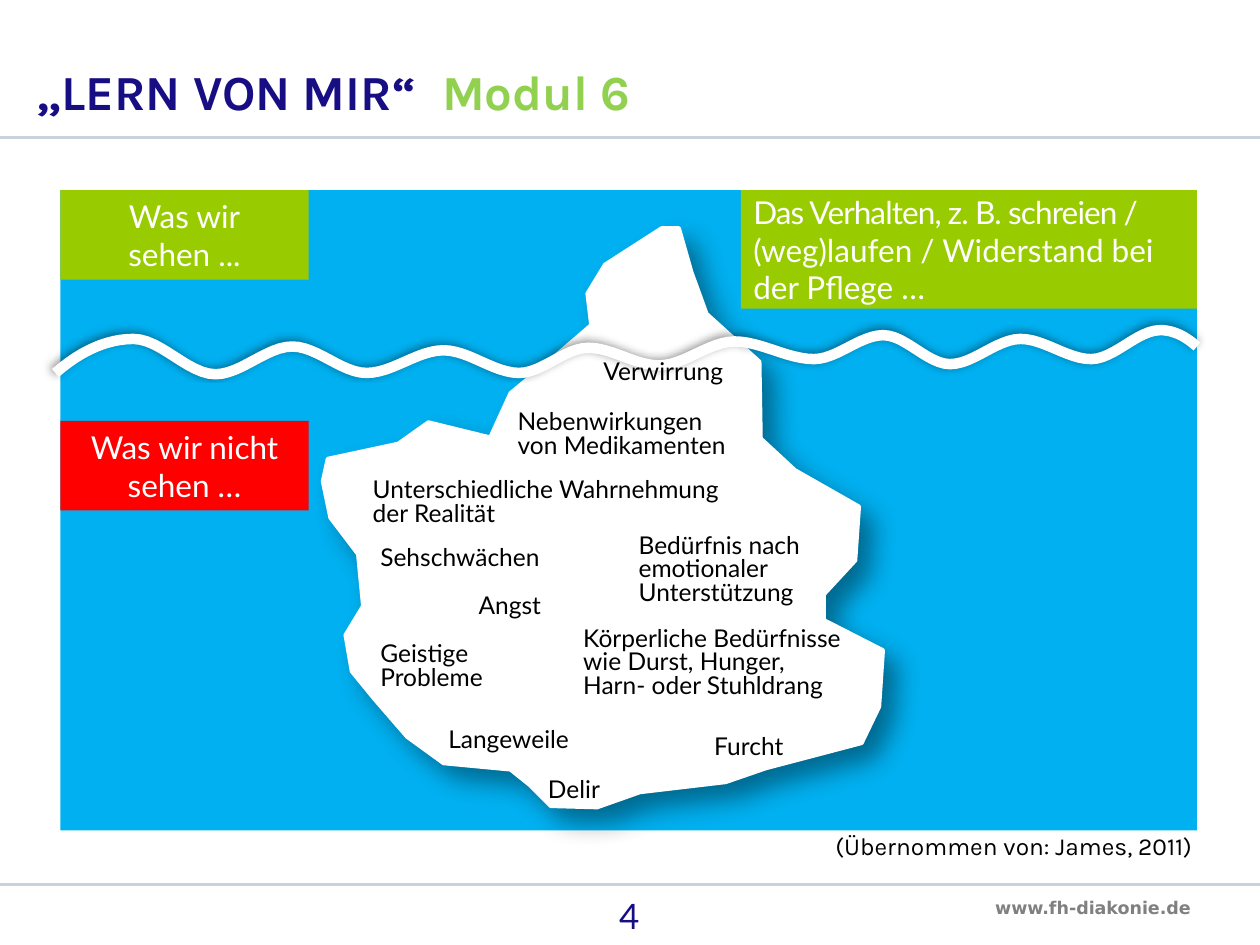
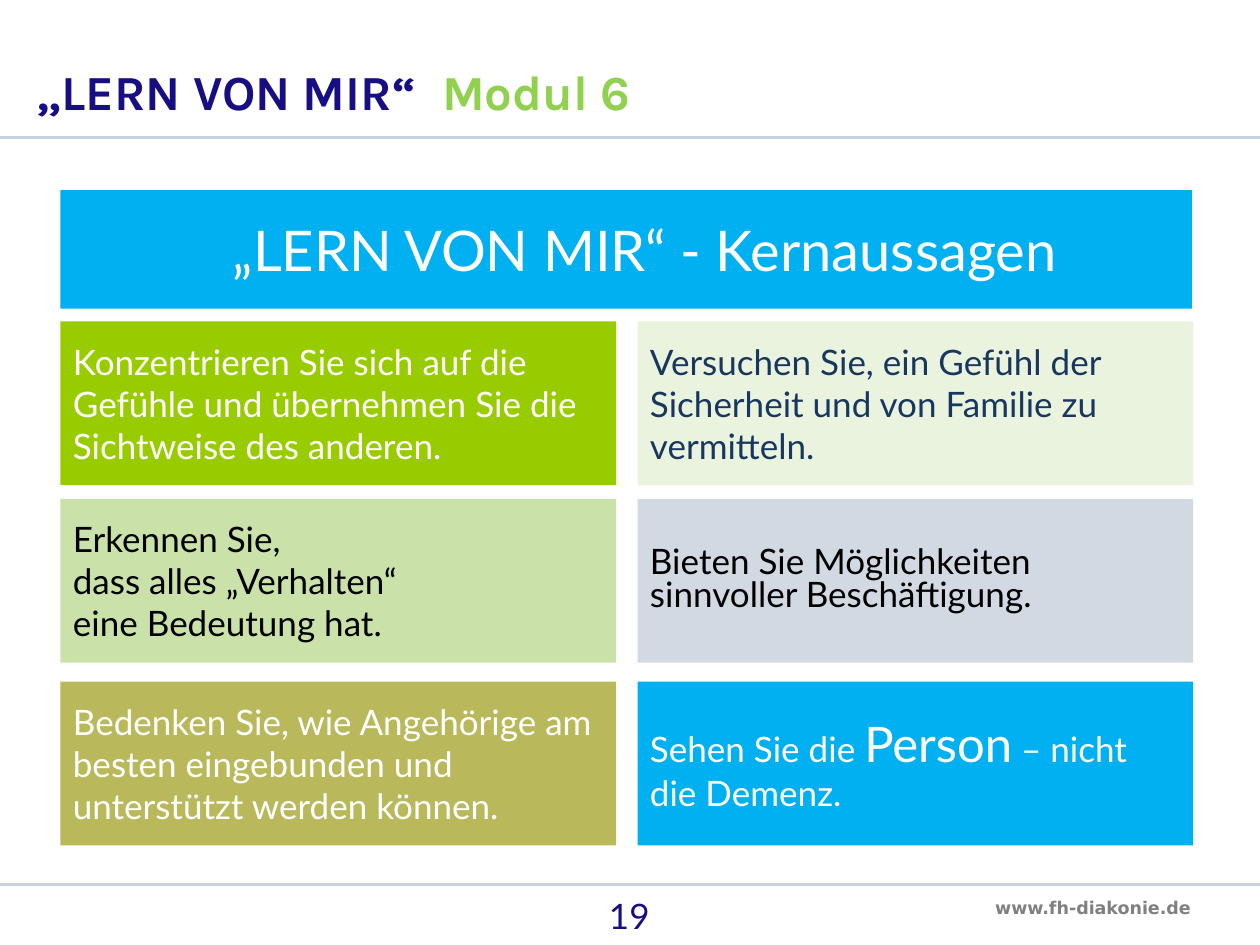
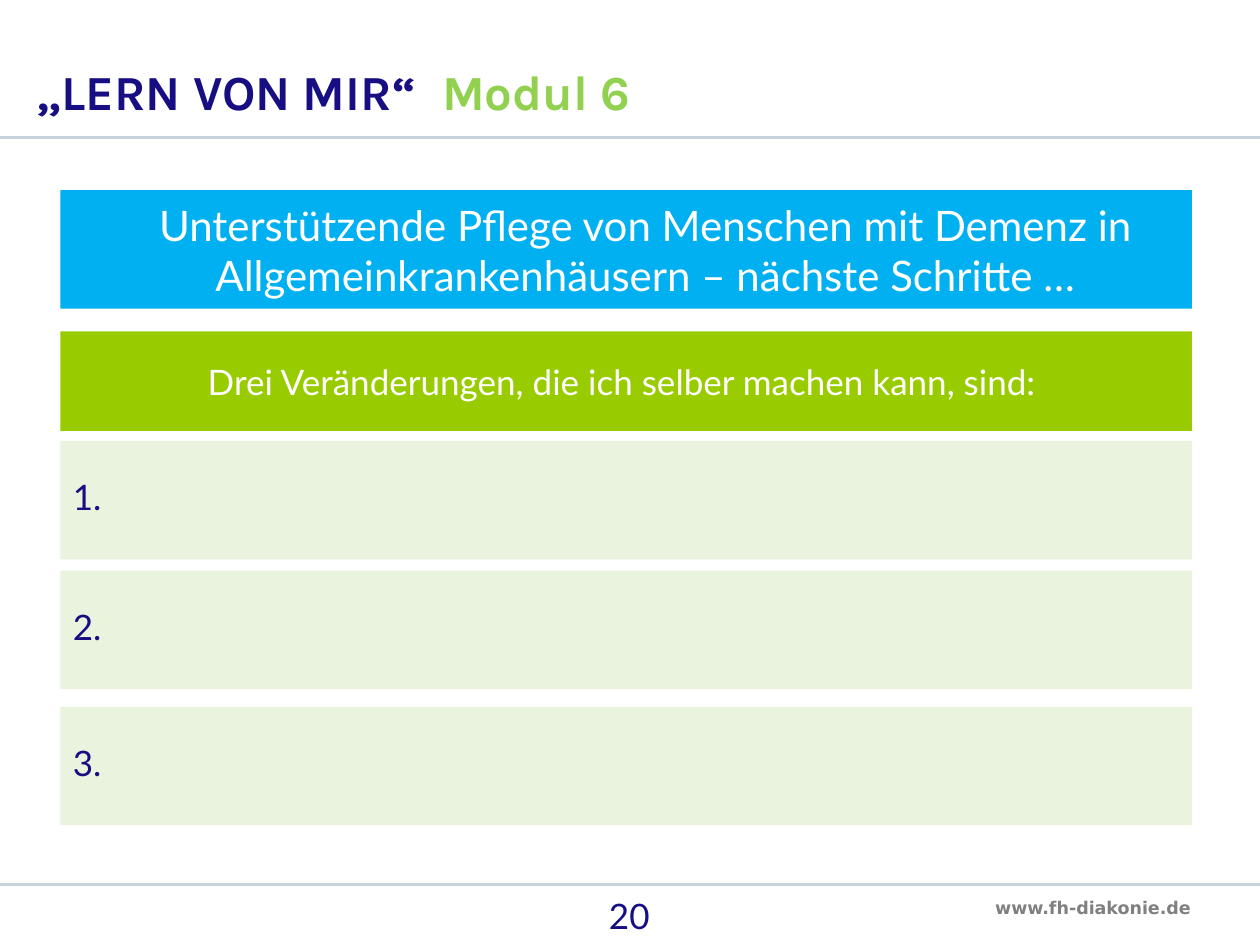
"""Build three training slides of "LERN VON MIR", module 6."""
from copy import deepcopy

from lxml import etree
from pptx import Presentation
from pptx.dml.color import RGBColor
from pptx.enum.shapes import MSO_CONNECTOR, MSO_SHAPE
from pptx.enum.text import MSO_ANCHOR, PP_ALIGN
from pptx.oxml.ns import qn
from pptx.util import Inches, Pt

LEFT, CENTER, RIGHT = PP_ALIGN.LEFT, PP_ALIGN.CENTER, PP_ALIGN.RIGHT
TOP, MIDDLE, BOTTOM = MSO_ANCHOR.TOP, MSO_ANCHOR.MIDDLE, MSO_ANCHOR.BOTTOM
RECTANGLE, STRAIGHT = MSO_SHAPE.RECTANGLE, MSO_CONNECTOR.STRAIGHT

WHITE, BLACK, GRAY = "FFFFFF", "000000", "808080"
NAVY, DARK_BLUE, BLUE, RED = "170E83", "17375E", "00B0F0", "FF0000"
LEAF, GREEN, PALE_GREEN, MIST = "92D050", "99CC00", "EAF3DD", "D2D9E2"
SOFT_GREEN, OLIVE, RULE = "CAE2AA", "B9B95C", "C8D2DC"
BODY, DISPLAY, WEB = "Lato", "Karla", "DejaVu Sans"

MARGIN, CONTENT_TOP, CONTENT_WIDTH, BANNER_HEIGHT = 0.48, 1.51, 8.98, 0.94
RULE_TOPS = (1.09, 7.02)
TITLE = [("„LERN VON MIR“", 28, NAVY), ("\t", 28, NAVY), ("Modul 6", 28, LEAF)]
MODULE_TAB = 3.22
WEBSITE = "www.fh-diakonie.de"

ICEBERG = [
    (3.23, 5.85), (2.97, 5.55), (2.79, 5.33), (2.74, 5.04), (2.88, 4.81),
    (2.84, 4.4), (2.62, 4.11), (2.56, 3.82), (2.6, 3.64), (3.16, 3.52),
    (3.4, 3.35), (3.89, 3.47), (4.05, 3.12), (4.4, 2.83), (4.69, 2.58),
    (4.66, 2.33), (4.8, 2.1), (5.25, 1.81), (5.39, 1.81), (5.49, 2.16),
    (5.61, 2.49), (6.03, 2.87), (6.04, 3.48), (6.31, 3.73), (6.82, 4.02),
    (6.79, 4.45), (6.54, 4.72), (6.54, 4.92), (7.01, 5.16), (6.98, 5.61),
    (6.84, 5.9), (6.08, 6.1), (5.76, 6.21), (5.08, 6.29), (4.74, 6.41),
    (4.37, 6.4), (4.2, 6.23), (4.05, 6.11), (3.52, 6.06),
]
WAVE_LEFT, WAVE_RIGHT = 0.44, 9.5
WAVE_TURNS = [
    (1.06, 2.69), (1.71, 2.97), (2.32, 2.75), (2.91, 2.96), (3.52, 2.78),
    (4.12, 2.96), (4.67, 2.76), (5.23, 2.9), (5.83, 2.71), (6.46, 2.85),
    (7.01, 2.66), (7.54, 2.89), (8.1, 2.69), (8.66, 2.85), (9.21, 2.62),
]
WAVE_PATH = [(WAVE_LEFT, 2.96), *WAVE_TURNS, (WAVE_RIGHT, 2.75)]
WAVE_STEPS = 12

SEEN = "Was wir\nsehen ..."
UNSEEN = "Was wir nicht sehen …"
BEHAVIOUR = [
    ("Das Verhalten, z. B. schreien / ", 18, WHITE),
    ("(weg)laufen / Widerstand bei der Pflege …", 18, WHITE),
]
SOURCE = "(Übernommen von: James, 2011) "
LINE_HEIGHT, BOX_PADDING = 0.19, 0.1
CAUSES = [
    ("Delir", 4.25, 6.14, 1.62, 1),
    ("Angst", 3.7, 4.68, 0.9, 1),
    ("Sehschwächen", 2.92, 4.3, 1.56, 1),
    ("Geistige Probleme", 2.92, 5.06, 1.08, 2),
    ("Nebenwirkungen\nvon Medikamenten", 4.01, 3.22, 2.64, 2),
    ("Bedürfnis nach emotionaler Unterstützung", 4.97, 4.2, 2.04, 3),
    ("Langeweile", 3.46, 5.74, 2.04, 1),
    ("Unterschiedliche Wahrnehmung der Realität", 2.86, 3.76, 3, 2),
    ("Furcht", 5.57, 5.8, 0.78, 1),
    ("Verwirrung", 4.69, 2.82, 1.29, 1),
    ("Körperliche Bedürfnisse wie Durst, Hunger, Harn- oder Stuhldrang",
     4.53, 4.94, 2.28, 4),
]

KEY_HEADING = "„LERN VON MIR“ - Kernaussagen"
KEY_COLUMNS, KEY_ROWS = (MARGIN, 5.06), (2.55, 3.96, 5.41)
KEY_MESSAGES = [
    [("Konzentrieren Sie sich auf die Gefühle und übernehmen Sie die "
      "Sichtweise des anderen.", GREEN, WHITE, 1),
     ("Versuchen Sie, ein Gefühl der Sicherheit und von Familie zu "
      "vermitteln.", PALE_GREEN, DARK_BLUE, 1)],
    [("Erkennen Sie,\ndass alles „Verhalten“\neine Bedeutung hat.",
      SOFT_GREEN, BLACK, 1),
     ("Bieten Sie Möglichkeiten sinnvoller Beschäftigung.",
      MIST, BLACK, 0.8)],
    [("Bedenken Sie, wie Angehörige am besten eingebunden und unterstützt "
      "werden können.", OLIVE, WHITE, 1),
     ([("Sehen Sie die ", 20, WHITE), ("Person", 28, WHITE),
       (" – nicht die Demenz.", 20, WHITE)], BLUE, WHITE, 1)],
]

STEPS_HEADING = ("Unterstützende Pflege von Menschen mit Demenz in "
                 "Allgemeinkrankenhäusern – nächste Schritte …")
STEPS_INTRO = "Drei Veränderungen, die ich selber machen kann, sind: "
STEPS = [("1.", 3.5), ("2.", 4.53), ("3.", 5.61)]


def rgb(color):
    return RGBColor.from_string(color)


def write(shape, content, size, color, font=BODY, align=LEFT, anchor=TOP,
          spacing=1, bold=False):
    frame = shape.text_frame
    frame.word_wrap = True
    frame.vertical_anchor = anchor
    paragraph = frame.paragraphs[0]
    paragraph.alignment = align
    paragraph.line_spacing = spacing
    if isinstance(content, str):
        paragraph.text = content
        styles = [(size, color)] * len(paragraph.runs)
    else:
        for words, _, _ in content:
            paragraph.add_run().text = words
        styles = [style for _, *style in content]
    for run, (run_size, run_color) in zip(paragraph.runs, styles):
        run.font.name = font
        run.font.size = Pt(run_size)
        run.font.bold = bold
        run.font.color.rgb = rgb(run_color)
    for line_break in paragraph._p.findall(qn("a:br")):
        line_break.append(deepcopy(paragraph.runs[0]._r.rPr))
    return paragraph


def add_text(slide, box, content, size, color, **style):
    label = slide.shapes.add_textbox(*map(Inches, box))
    return write(label, content, size, color, **style)


def add_panel(slide, box, fill):
    panel = slide.shapes.add_shape(RECTANGLE, *map(Inches, box))
    panel.shadow.inherit = False
    panel.fill.solid()
    panel.fill.fore_color.rgb = rgb(fill)
    panel.line.fill.background()
    return panel


def add_outline(slide, points, closed, width, blur, distance, angle):
    corners = [(Inches(x), Inches(y)) for x, y in points]
    builder = slide.shapes.build_freeform(*corners[0])
    builder.add_line_segments(corners[1:], close=closed)
    outline = builder.convert_to_shape()
    if closed:
        outline.fill.solid()
        outline.fill.fore_color.rgb = rgb(WHITE)
    else:
        outline.fill.background()
    outline.line.color.rgb = rgb(WHITE)
    outline.line.width = Pt(width)
    outline.shadow.inherit = False
    effects = outline._element.spPr.find(qn("a:effectLst"))
    shadow = etree.SubElement(
        effects, qn("a:outerShdw"), blurRad=str(Pt(blur)),
        dist=str(Pt(distance)), dir=str(angle * 60000), algn="tl",
        rotWithShape="0")
    tint = etree.SubElement(shadow, qn("a:srgbClr"), val=BLACK)
    etree.SubElement(tint, qn("a:alpha"), val="40000")


def wave_points():
    points = [WAVE_PATH[0]]
    for (x0, y0), (x1, y1) in zip(WAVE_PATH, WAVE_PATH[1:]):
        for step in range(1, WAVE_STEPS + 1):
            t = step / WAVE_STEPS
            if x0 == WAVE_LEFT:
                rise = t * (2 - t)
            elif x1 == WAVE_RIGHT:
                rise = t * t
            else:
                rise = t * t * (3 - 2 * t)
            points.append((x0 + (x1 - x0) * t, y0 + (y1 - y0) * rise))
    return points


def start_slide(deck, number):
    slide = deck.slides.add_slide(deck.slide_layouts[6])
    add_text(slide, (7.8, 7.07, 1.78, 0.27), WEBSITE, 10, GRAY, font=WEB,
             bold=True)
    for top in RULE_TOPS:
        rule = slide.shapes.add_connector(
            STRAIGHT, 0, Inches(top), deck.slide_width, Inches(top))
        rule.line.color.rgb = rgb(RULE)
        rule.line.width = Pt(1.5)
        etree.SubElement(rule._element.spPr, qn("a:effectLst"))
    add_text(slide, (3.83, 7.05, 2.33, 0.45), str(number), 20, NAVY,
             align=CENTER)
    title = add_text(slide, (0.19, 0.43, 6.67, 0.58), TITLE, 28, NAVY,
                     font=DISPLAY, anchor=BOTTOM, spacing=0.9, bold=True)
    tabs = etree.SubElement(title._p.get_or_add_pPr(), qn("a:tabLst"))
    etree.SubElement(tabs, qn("a:tab"), pos=str(Inches(MODULE_TAB)), algn="l")
    return slide


def add_heading(slide, heading, size):
    banner = add_panel(
        slide, (MARGIN, CONTENT_TOP, CONTENT_WIDTH, BANNER_HEIGHT), BLUE)
    banner.text_frame.margin_left = Inches(0.4)
    write(banner, heading, size, WHITE, align=CENTER, anchor=MIDDLE)


def build_iceberg(deck):
    slide = start_slide(deck, 4)
    add_panel(slide, (MARGIN, CONTENT_TOP, 9.02, 5.08), BLUE)
    add_outline(slide, ICEBERG, True, 2, 15, 11, 45)
    for words, top, fill in ((SEEN, CONTENT_TOP, GREEN), (UNSEEN, 3.34, RED)):
        sign = add_panel(slide, (MARGIN, top, 1.97, 0.71), fill)
        write(sign, words, 18, WHITE, align=CENTER, anchor=MIDDLE)
    behaviour = add_panel(slide, (5.88, CONTENT_TOP, 3.62, 0.94), GREEN)
    lines = write(behaviour, BEHAVIOUR, 18, WHITE, anchor=MIDDLE)
    lines.runs[0]._r.get_or_add_rPr().set("spc", "-50")
    add_text(slide, (6.35, 6.55, 3.26, 0.34), SOURCE, 14, BLACK,
             font=DISPLAY, align=RIGHT)
    add_outline(slide, wave_points(), False, 6, 4, 3, 225)
    for cause, left, top, width, line_count in CAUSES:
        height = BOX_PADDING + LINE_HEIGHT * line_count
        add_text(slide, (left, top, width, height), cause, 14, BLACK,
                 spacing=0.8)


def build_key_messages(deck):
    slide = start_slide(deck, 19)
    add_heading(slide, KEY_HEADING, 32)
    for top, messages in zip(KEY_ROWS, KEY_MESSAGES):
        for left, (message, fill, color, spacing) in zip(KEY_COLUMNS, messages):
            card = add_panel(slide, (left, top, 4.41, 1.3), fill)
            write(card, message, 20, color, anchor=MIDDLE, spacing=spacing)


def build_next_steps(deck):
    slide = start_slide(deck, 20)
    add_heading(slide, STEPS_HEADING, 24)
    intro = add_panel(slide, (MARGIN, 2.63, CONTENT_WIDTH, 0.79), GREEN)
    write(intro, STEPS_INTRO, 20, WHITE, align=CENTER, anchor=MIDDLE)
    for number, top in STEPS:
        row = add_panel(
            slide, (MARGIN, top, CONTENT_WIDTH, BANNER_HEIGHT), PALE_GREEN)
        write(row, number, 20, NAVY, anchor=MIDDLE, spacing=0.8)


def main():
    deck = Presentation()
    deck.slide_width, deck.slide_height = Inches(10), Inches(7.5)
    build_iceberg(deck)
    build_key_messages(deck)
    build_next_steps(deck)
    deck.save("out.pptx")


if __name__ == "__main__":
    main()
